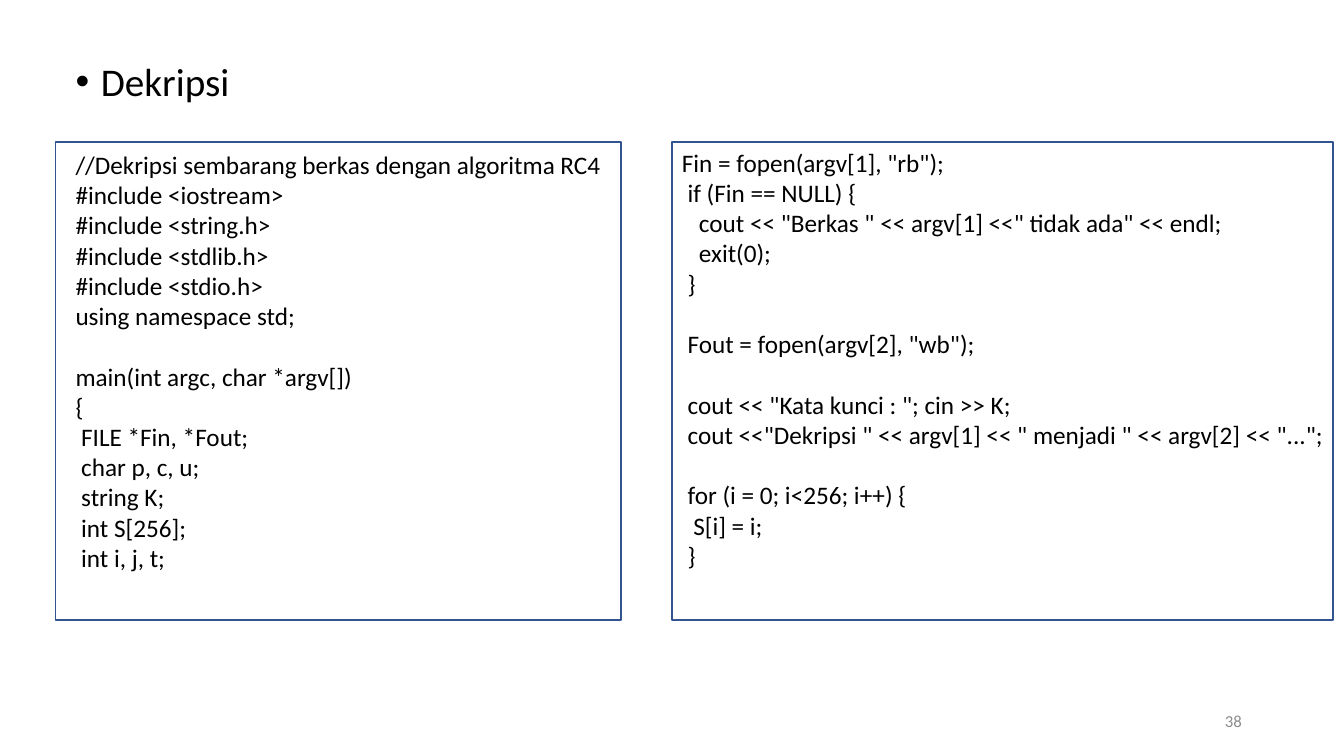
"""Build the slide that shows the first part of an RC4 decryption program."""
import pptx
import pptx.dml.color
import pptx.enum.shapes
import pptx.enum.text
import pptx.oxml.ns
import pptx.util
from lxml import etree

BLACK = pptx.dml.color.RGBColor(0x00, 0x00, 0x00)
GREY = pptx.dml.color.RGBColor(0x8C, 0x8C, 0x8C)
BLUE = pptx.dml.color.RGBColor(0x32, 0x54, 0x91)

DECLARATIONS = """//Dekripsi sembarang berkas dengan algoritma RC4
#include <iostream>
#include <string.h>
#include <stdlib.h>
#include <stdio.h>
using namespace std;

main(int argc, char *argv[])
{
 FILE *Fin, *Fout;
 char p, c, u;
 string K;
 int S[256];
 int i, j, t;"""

FILE_SETUP = """Fin = fopen(argv[1], "rb");
 if (Fin == NULL) {
   cout << "Berkas " << argv[1] <<" tidak ada" << endl;
   exit(0);
 }

 Fout = fopen(argv[2], "wb");

 cout << "Kata kunci : "; cin >> K;
 cout <<"Dekripsi " << argv[1] << " menjadi " << argv[2] << "...";

 for (i = 0; i<256; i++) {
  S[i] = i;
 }"""

deck = pptx.Presentation()
deck.slide_width = pptx.util.Inches(13.33)
deck.slide_height = pptx.util.Inches(7.5)
column = deck.slide_width / 100
row = deck.slide_height / 100


def grid(left, top, width, height):
    """Turn columns and rows into lengths."""
    return [round(n * unit) for n, unit in
            ((left, column), (top, row), (width, column), (height, row))]


def style(paragraph, size, color):
    """Set the font of a whole paragraph."""
    paragraph.font.name = "Calibri"
    paragraph.font.size = pptx.util.Pt(size)
    paragraph.font.color.rgb = color


slide = deck.slides.add_slide(deck.slide_layouts[1])
unused_title = slide.shapes.title.element
unused_title.getparent().remove(unused_title)

topic = slide.placeholders[1]
topic.left, topic.top, topic.width, topic.height = grid(4.88, 7.6, 86.25, 80.27)
topic.text_frame.text = "Dekripsi"
heading = topic.text_frame.paragraphs[0]
heading.line_spacing = 0.9
heading.space_before = pptx.util.Pt(0)
properties = heading._p.get_or_add_pPr()
properties.set("marL", str(pptx.util.Inches(0.25)))
properties.set("indent", str(pptx.util.Inches(-0.25)))
etree.SubElement(properties, pptx.oxml.ns.qn("a:buFont")).set("typeface", "Arial")
etree.SubElement(properties, pptx.oxml.ns.qn("a:buChar")).set("char", "•")
style(heading, 28, BLACK)

page = slide.shapes.add_textbox(*grid(70.65, 92.67, 22.5, 5.33)).text_frame
page.word_wrap = True
page.vertical_anchor = pptx.enum.text.MSO_ANCHOR.MIDDLE
page.text = "38"
page.paragraphs[0].alignment = pptx.enum.text.PP_ALIGN.RIGHT
style(page.paragraphs[0], 12, GREY)

listings = [
    (DECLARATIONS, (4.88, 19.07, 50, 66), (4.13, 18.8, 42.08, 63.2)),
    (FILE_SETUP, (50, 18.8, 50, 57.87), (50, 18.8, 49.2, 63.2)),
]
for code, code_area, border_area in listings:
    listing = slide.shapes.add_textbox(*grid(*code_area)).text_frame
    listing.word_wrap = True
    listing.text = code
    for line in listing.paragraphs:
        style(line, 18, BLACK)

    border = slide.shapes.add_shape(
        pptx.enum.shapes.MSO_SHAPE.RECTANGLE, *grid(*border_area))
    border.shadow.inherit = False
    border.fill.background()
    border.line.color.rgb = BLUE
    border.line.width = pptx.util.Pt(1)

deck.save("out.pptx")
